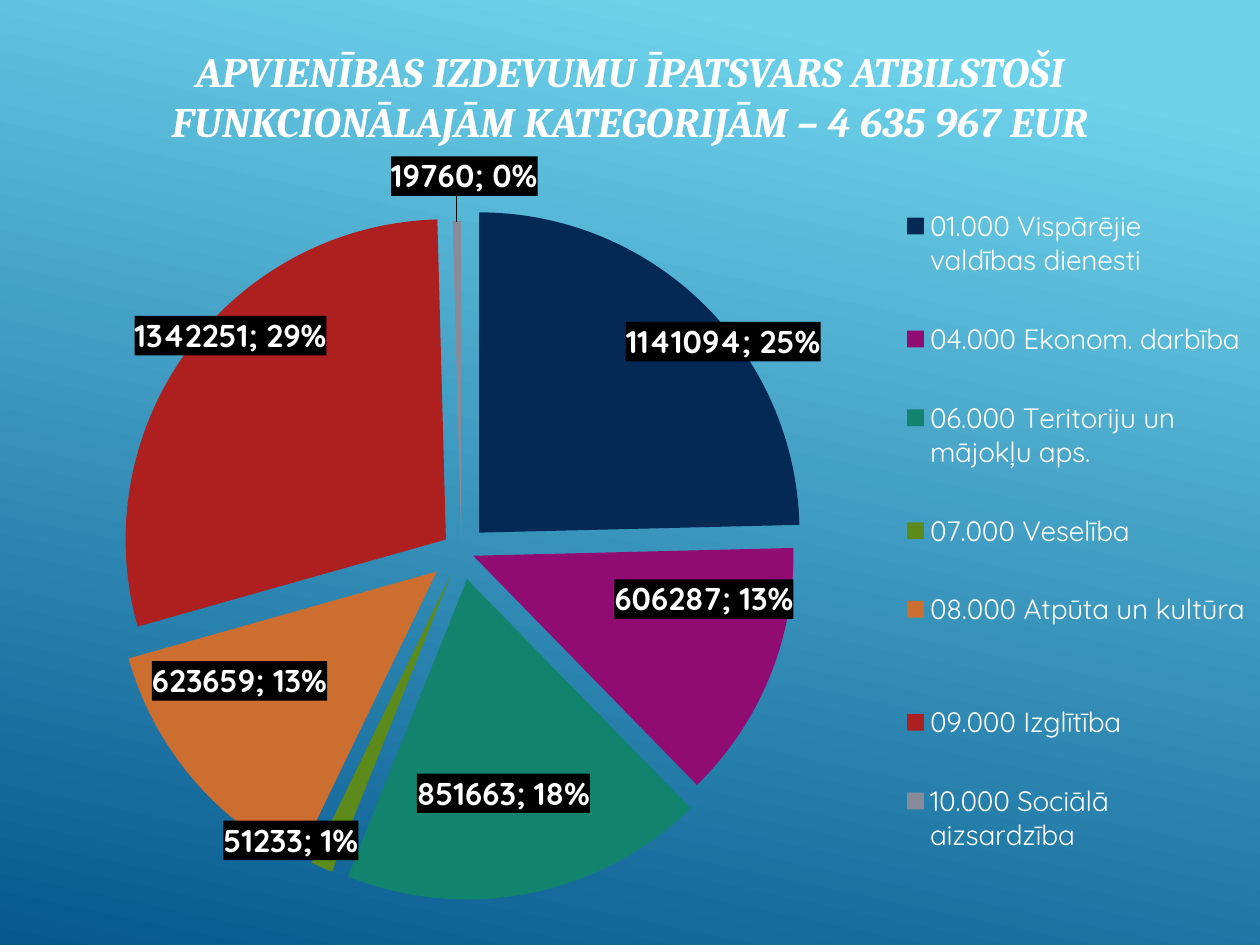
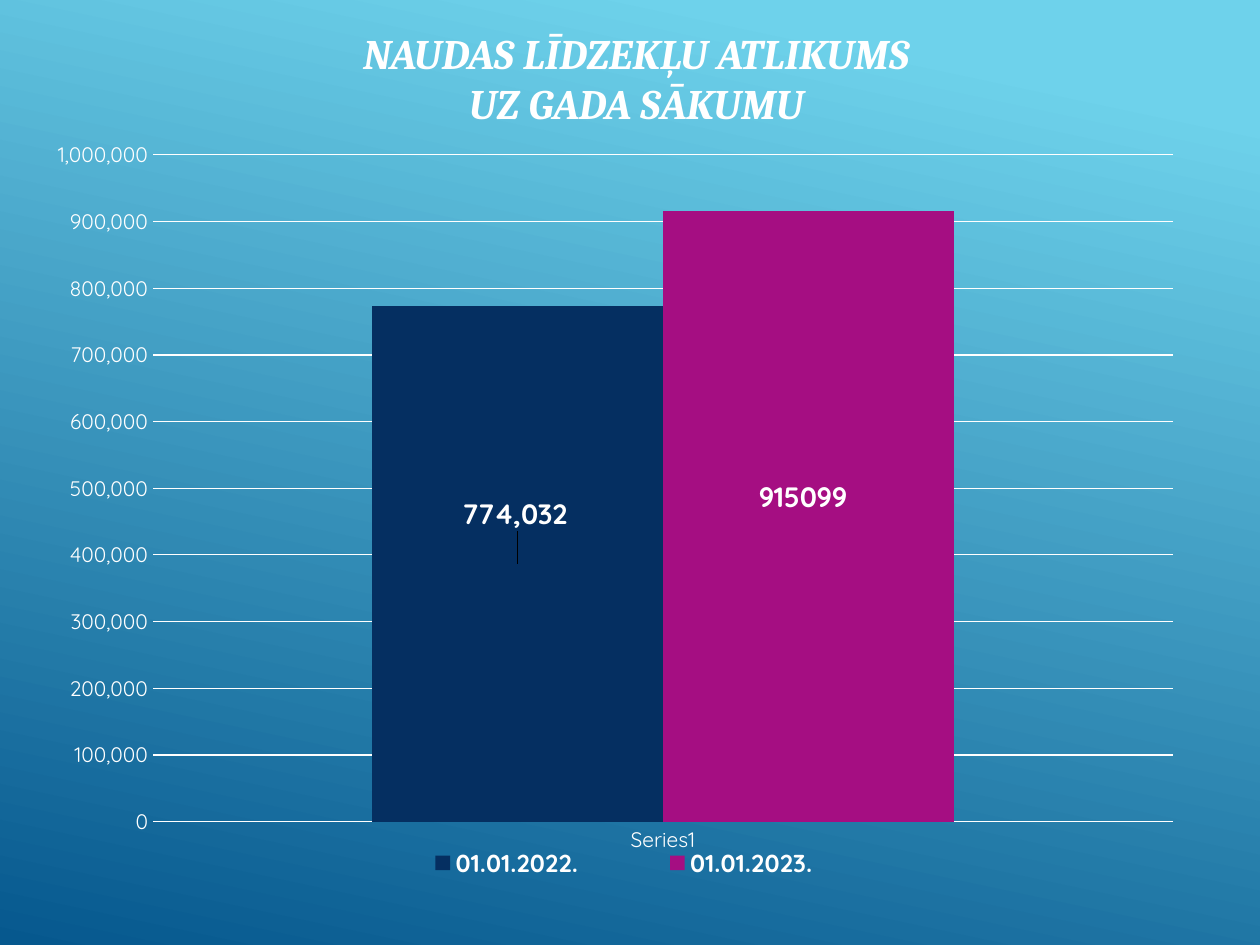
from pptx import Presentation
from pptx.chart.data import CategoryChartData
from pptx.dml.color import RGBColor
from pptx.enum.chart import XL_CHART_TYPE as ChartType
from pptx.enum.chart import XL_LEGEND_POSITION as LegendPosition
from pptx.enum.chart import XL_TICK_MARK as TickMark
from pptx.enum.text import MSO_ANCHOR as Anchor
from pptx.enum.text import PP_ALIGN as Align
from pptx.oxml import parse_xml
from pptx.oxml.ns import nsdecls, qn
from pptx.util import Inches, Pt

WHITE = RGBColor(0xFF, 0xFF, 0xFF)
BLACK = RGBColor(0x00, 0x00, 0x00)
SKY = RGBColor(0x6E, 0xD2, 0xEB)
DEEP_BLUE = RGBColor(0x06, 0x58, 0x8E)
NAVY = RGBColor(0x05, 0x2F, 0x61)
MAGENTA = RGBColor(0xA5, 0x0E, 0x82)
PIE_NAVY = RGBColor(0x04, 0x29, 0x55)
PIE_MAGENTA = RGBColor(0x91, 0x0C, 0x72)
PIE_TEAL = RGBColor(0x12, 0x84, 0x6D)
PIE_GREEN = RGBColor(0x5D, 0x8B, 0x1B)
PIE_ORANGE = RGBColor(0xCC, 0x6E, 0x30)
PIE_RED = RGBColor(0xAE, 0x1F, 0x20)
PIE_GREY = RGBColor(0x88, 0x8B, 0x9A)

# name, value, colour, explosion, label offset in percent of the chart
EXPENSES = [
    ("01.000 Vispārējie valdības dienesti", 1141094, PIE_NAVY, 8, (10.1, -9.4)),
    ("04.000 Ekonom. darbība", 606287, PIE_MAGENTA, 4, (6.3, -2.1)),
    ("06.000 Teritoriju un mājokļu aps.", 851663, PIE_TEAL, 9, (0.4, 7)),
    ("07.000 Veselība", 51233, PIE_GREEN, 8, (-7.3, 14.7)),
    ("08.000 Atpūta un kultūra\n", 623659, PIE_ORANGE, 10, (-5.7, 0.8)),
    ("09.000 Izglītība", 1342251, PIE_RED, 6, (-6.6, -13.4)),
    ("10.000 Sociālā aizsardzība", 19760, PIE_GREY, 3, (0.4, -25.2)),
]
# name, value, colour, number format, label offset in percent of the chart
BALANCES = [
    ("01.01.2022.", 774032, NAVY, "#,##0", (-0.2, -6.2)),
    ("01.01.2023.", 915099, MAGENTA, "General", (-0.5, -2.5)),
]


def explosion(percent):
    return parse_xml(f'<c:explosion {nsdecls("c")} val="{percent}"/>')


def manual_layout(x, y, width, height, inner=False):
    target = '<c:layoutTarget val="inner"/>' if inner else ""
    return parse_xml(
        f'<c:layout {nsdecls("c")}><c:manualLayout>{target}'
        '<c:xMode val="edge"/><c:yMode val="edge"/>'
        f'<c:x val="{x / 100}"/><c:y val="{y / 100}"/>'
        f'<c:w val="{width / 100}"/><c:h val="{height / 100}"/>'
        '</c:manualLayout></c:layout>'
    )


class Deck:
    title_font = "Cambria"
    body_font = "Quicksand"

    def __init__(self):
        self.presentation = Presentation()
        self.presentation.slide_width = Inches(10)
        self.presentation.slide_height = Inches(7.5)
        fill = self.presentation.slide_master.background.fill
        fill.gradient()
        fill.gradient_angle = 258
        for stop, color, position in zip(fill.gradient_stops, (SKY, DEEP_BLUE), (0.1, 1)):
            stop.color.rgb = color
            stop.position = position
        self.slide = None

    def add_slide(self):
        self.slide = self.presentation.slides.add_slide(self.presentation.slide_layouts[6])

    def style(self, font, size, name=body_font, bold=False):
        font.name = name
        font.size = Pt(size)
        font.bold = bold
        font.color.rgb = WHITE

    def title(self, lines, left, top, width, height):
        box = self.slide.shapes.add_textbox(
            Inches(left), Inches(top), Inches(width), Inches(height))
        frame = box.text_frame
        frame.word_wrap = True
        frame.vertical_anchor = Anchor.MIDDLE
        for index, line in enumerate(lines):
            paragraph = frame.add_paragraph() if index else frame.paragraphs[0]
            paragraph.alignment = Align.CENTER
            run = paragraph.add_run()
            run.text = line
            self.style(run.font, 24, self.title_font, bold=True)
            run.font.italic = True

    def chart(self, kind, data, place, size, plot_area):
        chart = self.slide.shapes.add_chart(kind, *map(Inches, place), data).chart
        chart.has_title = False
        self.style(chart.font, size)
        area = chart._chartSpace.chart.plotArea
        for layout in area.findall(qn("c:layout")):
            area.remove(layout)
        area.insert(0, manual_layout(*plot_area, inner=True))
        return chart

    def legend(self, chart, position, size, place, bold=False):
        chart.has_legend = True
        legend = chart.legend
        legend.position = position
        legend.include_in_layout = False
        self.style(legend.font, size, bold=bold)
        element = legend._element
        for layout in element.findall(qn("c:layout")):
            element.remove(layout)
        element.find(qn("c:legendPos")).addnext(manual_layout(*place))

    def labels(self, series, offsets, size, number_format="General", back=None, percent=False):
        fill = f'<a:solidFill><a:srgbClr val="{back}"/></a:solidFill>' if back else "<a:noFill/>"
        look = (
            f'<c:numFmt formatCode="{number_format}" sourceLinked="0"/><c:spPr>{fill}</c:spPr>'
            f'<c:txPr><a:bodyPr/><a:p><a:pPr><a:defRPr sz="{size * 100}" b="1">'
            f'<a:solidFill><a:srgbClr val="{WHITE}"/></a:solidFill>'
            f'<a:latin typeface="{self.body_font}"/>'
            '</a:defRPr></a:pPr><a:endParaRPr lang="lv-LV"/></a:p></c:txPr>'
            '<c:dLblPos val="ctr"/><c:showLegendKey val="0"/><c:showVal val="1"/>'
            '<c:showCatName val="0"/><c:showSerName val="0"/>'
            f'<c:showPercent val="{int(percent)}"/>'
            '<c:showBubbleSize val="0"/><c:separator>; </c:separator>'
        )
        points = "".join(
            f'<c:dLbl><c:idx val="{index}"/><c:layout><c:manualLayout>'
            f'<c:x val="{x / 100}"/><c:y val="{y / 100}"/>'
            f'</c:manualLayout></c:layout>{look}</c:dLbl>'
            for index, (x, y) in enumerate(offsets))
        leader = '<c:showLeaderLines val="1"/>' if percent else ""
        series._element.find(qn("c:cat")).addprevious(parse_xml(
            f'<c:dLbls {nsdecls("c", "a")}>{points}{look}{leader}</c:dLbls>'))

    def pie(self, rows, place):
        names, values, colors, explosions, offsets = zip(*rows)
        data = CategoryChartData()
        data.categories = names
        data.add_series("Series 1", values)
        chart = self.chart(ChartType.PIE, data, place, 18, (0.3, 3.2, 77.4, 96.8))
        plot = chart.plots[0]
        plot.vary_by_categories = True
        self.legend(chart, LegendPosition.RIGHT, 16, (72.7, 4.1, 26.5, 90))

        series = plot.series[0]
        for index, color in enumerate(colors):
            fill = series.points[index].format.fill
            fill.solid()
            fill.fore_color.rgb = color
        slices = series._element.findall(qn("c:dPt"))
        for element, percent in zip(slices, explosions):
            element.find(qn("c:spPr")).addprevious(explosion(percent))
        slices[0].addprevious(explosion(23))
        self.labels(series, offsets, 18, back=BLACK, percent=True)

    def columns(self, category, rows, place):
        data = CategoryChartData()
        data.categories = [category]
        for name, value, *_ in rows:
            data.add_series(name, [value])
        chart = self.chart(ChartType.COLUMN_CLUSTERED, data, place, 10, (10.25, 3.8, 87.9, 84))
        self.legend(chart, LegendPosition.BOTTOM, 14, (27.4, 90.5, 46.9, 5), bold=True)
        plot = chart.plots[0]
        plot.vary_by_categories = False
        plot.gap_width = 150
        plot.overlap = 0
        for series, (_, _, color, number_format, offset) in zip(plot.series, rows):
            series.format.fill.solid()
            series.format.fill.fore_color.rgb = color
            self.labels(series, [offset], 16, number_format)

        for axis in (chart.category_axis, chart.value_axis):
            axis.major_tick_mark = TickMark.NONE
            axis.minor_tick_mark = TickMark.NONE
            axis.format.line.fill.background()
            self.style(axis.tick_labels.font, 12)
        axis = chart.value_axis
        axis.minimum_scale = 0
        axis.maximum_scale = 1000000
        axis.major_unit = 100000
        axis.tick_labels.number_format = "#,##0"
        axis.tick_labels.number_format_is_linked = False
        axis.major_gridlines.format.line.color.rgb = WHITE
        axis.major_gridlines.format.line.width = Pt(0.75)


def main():
    deck = Deck()

    deck.add_slide()
    deck.title(["APVIENĪBAS IZDEVUMU ĪPATSVARS ATBILSTOŠI "
                "FUNKCIONĀLAJĀM KATEGORIJĀM – 4 635 967 EUR"], 0.5, 0.21, 9, 1.1)
    deck.pie(EXPENSES, (-0.39, 1.04, 10.39, 6.46))

    deck.add_slide()
    deck.title(["NAUDAS LĪDZEKĻU ATLIKUMS", "UZ GADA SĀKUMU"], 0.76, 0, 8.58, 1.23)
    deck.columns("Series1", BALANCES, (0.27, 0.99, 9.21, 6.3))

    deck.presentation.save("out.pptx")


if __name__ == "__main__":
    main()
